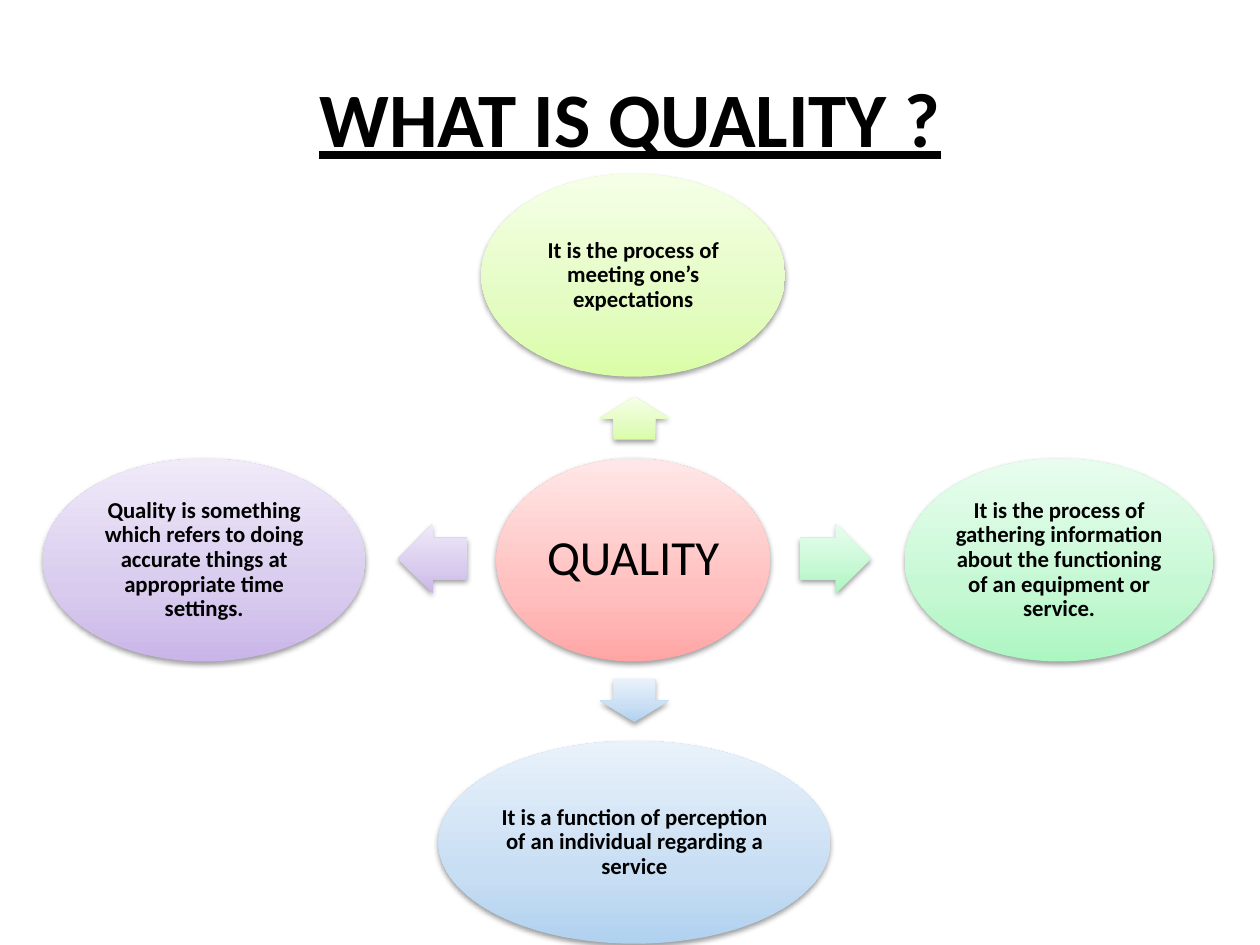
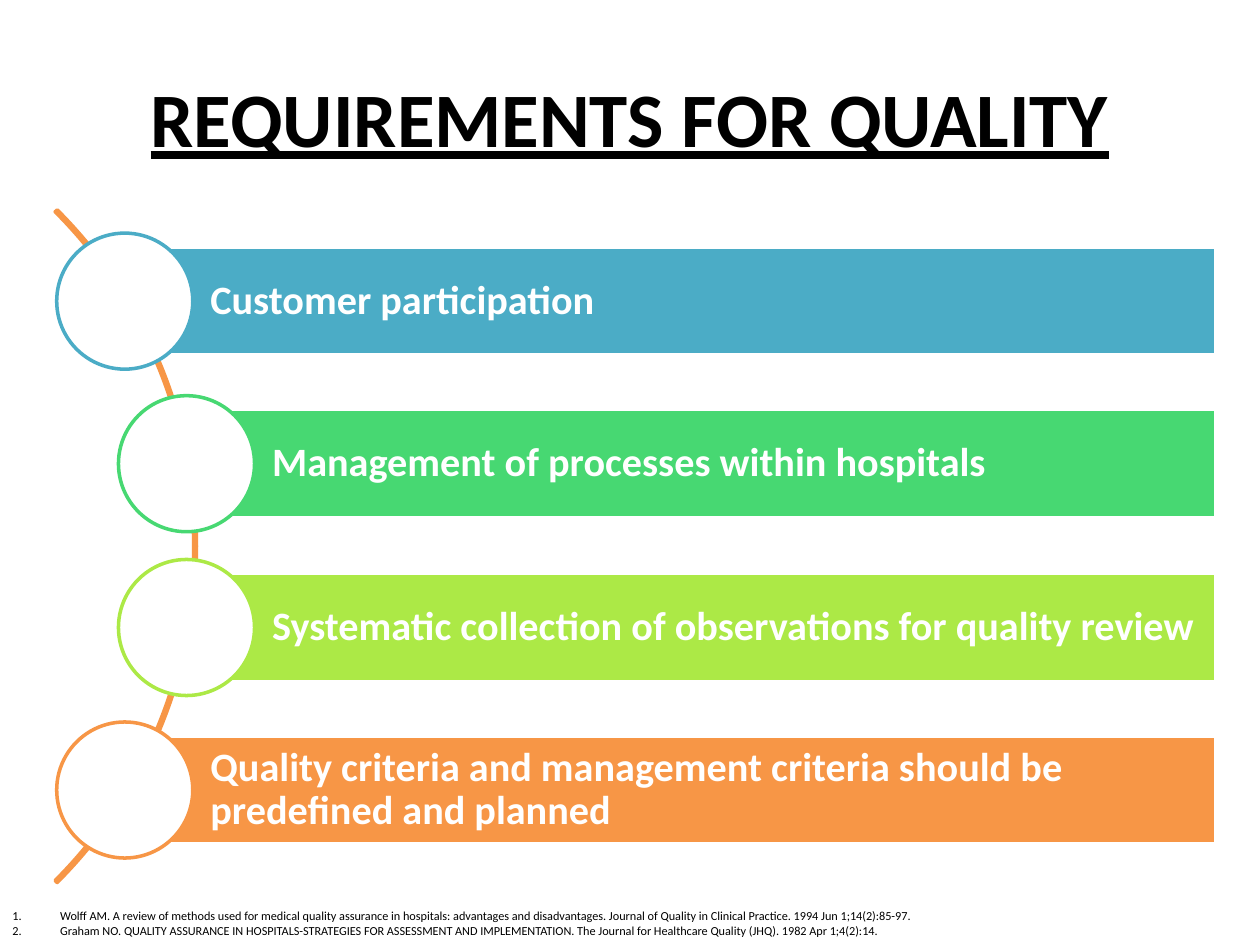
import copy

import pptx
import pptx.util
from lxml import etree
from pptx.dml.color import RGBColor
from pptx.enum.shapes import MSO_SHAPE
from pptx.enum.text import MSO_ANCHOR, PP_ALIGN
from pptx.oxml.ns import qn

EMU_PER_PX = 9144  # 100 px to the inch
FONT = "Calibri"

COLORS = {
    "text": "000000",
    "white": "FFFFFF",
    "teal": "4BACC6",
    "green": "47D872",
    "lime": "ACE946",
    "orange": "F79646",
}
GRADIENTS = {
    "red": ("FFA6A5", "FFC0BF", "FFE7E7"),
    "lime": ("DAFDA7", "E4FCC2", "F5FFE7"),
    "green": ("ACF6C1", "C5F8D3", "E8FDEE"),
    "blue": ("B0D1EF", "C8DEF3", "E9F2FB"),
    "purple": ("C9B5E8", "D8CBEE", "F0EAF9"),
}
GRADIENT_POSITIONS = (0, 0.35, 1)

# Centre of the hub, and what surrounds it
HUB_X, HUB_Y = 503, 444
OVAL_HEIGHT = 161
# text, gradient, oval centre x, y and width, arrow shape, arrow centre x, y and size
MEANINGS = [
    ("It is the process of meeting one’s expectations", "lime",
     (HUB_X, HUB_Y - 225, 241), MSO_SHAPE.UP_ARROW, (HUB_X, 332, 55, 34)),
    ("It is the process of gathering information about the functioning of an "
     "equipment or service.", "green",
     (840, HUB_Y, 245), MSO_SHAPE.RIGHT_ARROW, (663, HUB_Y, 56, 55)),
    ("It is a function of perception of an individual regarding a service", "blue",
     (HUB_X, HUB_Y + 225, 311), MSO_SHAPE.DOWN_ARROW, (HUB_X, 556, 55, 34)),
    ("Quality is something which refers to doing accurate things at appropriate "
     "time settings.", "purple",
     (162, HUB_Y, 256), MSO_SHAPE.LEFT_ARROW, (344, HUB_Y, 55, 55)),
]

# text, colour, centre x of the circle
REQUIREMENTS = [
    ("Customer participation", "teal", 99),
    ("Management of processes within hospitals", "green", 148),
    ("Systematic collection of observations for quality review", "lime", 148),
    ("Quality criteria and management criteria should be predefined and planned",
     "orange", 99),
]
FIRST_ROW_Y, LAST_ROW_Y = 239, 627
BAR_RIGHT, BAR_HEIGHT, CIRCLE_SIZE = 965, 86, 108

REFERENCES = [
    "Wolff AM. A review of methods used for medical quality assurance in hospitals: "
    "advantages and disadvantages. Journal of Quality in Clinical Practice. "
    "1994 Jun 1;14(2):85-97.",
    "Graham NO. QUALITY ASSURANCE IN HOSPITALS-STRATEGIES FOR ASSESSMENT AND "
    "IMPLEMENTATION. The Journal for Healthcare Quality (JHQ). 1982 Apr 1;4(2):14.",
]


def px(length):
    return pptx.util.Emu(round(length) * EMU_PER_PX)


def rgb(name):
    return RGBColor.from_string(COLORS[name])


def write(frame, *texts, size, color="text", bold=False, underline=False,
          align=PP_ALIGN.LEFT, anchor=MSO_ANCHOR.MIDDLE, insets=(10, 5, 10, 5),
          spacing=None, number_indent=None):
    """Fill a text frame with one paragraph per text; insets run left, top, right, bottom."""
    frame.word_wrap = True
    frame.vertical_anchor = anchor
    (frame.margin_left, frame.margin_top,
     frame.margin_right, frame.margin_bottom) = map(px, insets)
    for index, text in enumerate(texts):
        paragraph = frame.add_paragraph() if index else frame.paragraphs[0]
        if number_indent:
            number_paragraph(paragraph, number_indent)
        paragraph.alignment = align
        paragraph.line_spacing = spacing
        run = paragraph.add_run()
        run.text = text
        run.font.name = FONT
        run.font.size = pptx.util.Pt(size)
        run.font.bold = bold
        run.font.underline = underline
        run.font.color.rgb = rgb(color)


def number_paragraph(paragraph, indent):
    properties = paragraph._p.get_or_add_pPr()
    properties.set("marL", str(px(indent)))
    properties.set("indent", str(-px(indent)))
    etree.SubElement(properties, qn("a:buFont"), typeface="+mj-lt")
    etree.SubElement(properties, qn("a:buAutoNum"), type="arabicPeriod")


def add_text(slide, left, top, width, height, *texts, **text_format):
    box = slide.shapes.add_textbox(px(left), px(top), px(width), px(height))
    write(box.text_frame, *texts, **text_format)


def add_title(slide, text):
    add_text(slide, 50, 30, 900, 125, text, size=44, bold=True, underline=True,
             align=PP_ALIGN.CENTER)


def add_outlined(slide, kind, left, top, width, height, fill, line):
    """Add a flat shape with a 2 pt outline; no fill when fill is None."""
    shape = slide.shapes.add_shape(kind, px(left), px(top), px(width), px(height))
    shape.shadow.inherit = False
    if fill:
        shape.fill.solid()
        shape.fill.fore_color.rgb = rgb(fill)
    else:
        shape.fill.background()
    shape.line.color.rgb = rgb(line)
    shape.line.width = pptx.util.Pt(2)
    return shape


def add_glossy(slide, kind, center_x, center_y, width, height, gradient):
    """Add a centred shape with a vertical gradient and a soft shadow below."""
    shape = slide.shapes.add_shape(kind, px(center_x - width / 2), px(center_y - height / 2),
                                   px(width), px(height))
    shape.line.fill.background()
    shape.fill.gradient()
    shape.fill.gradient_angle = 90
    properties = shape._element.spPr
    stop_list = properties.find(".//" + qn("a:gsLst"))
    stop_list.append(copy.deepcopy(stop_list[-1]))
    for stop, position, color in zip(shape.fill.gradient_stops, GRADIENT_POSITIONS,
                                     GRADIENTS[gradient]):
        stop.position = position
        stop.color.rgb = RGBColor.from_string(color)
    shape.shadow.inherit = False
    shadow = etree.SubElement(properties.find(qn("a:effectLst")), qn("a:outerShdw"),
                              blurRad="40000", dist="20000", dir="5400000",
                              rotWithShape="0")
    shadow_color = etree.SubElement(shadow, qn("a:srgbClr"), val="000000")
    etree.SubElement(shadow_color, qn("a:alpha"), val="38000")
    return shape


def add_oval(slide, center_x, center_y, width, gradient, text, size, bold, inset):
    oval = add_glossy(slide, MSO_SHAPE.OVAL, center_x, center_y, width, OVAL_HEIGHT, gradient)
    write(oval.text_frame, text, size=size, bold=bold, align=PP_ALIGN.CENTER,
          insets=(inset,) * 4, spacing=0.9)


def add_requirement(slide, center_x, center_y, text, color):
    bar = add_outlined(slide, MSO_SHAPE.RECTANGLE, center_x, center_y - BAR_HEIGHT / 2,
                       BAR_RIGHT - center_x, BAR_HEIGHT, color, "white")
    write(bar.text_frame, text, size=23, color="white", bold=True,
          insets=(68, 6, 6, 6), spacing=0.9)
    radius = CIRCLE_SIZE / 2
    add_outlined(slide, MSO_SHAPE.OVAL, center_x - radius, center_y - radius,
                 CIRCLE_SIZE, CIRCLE_SIZE, "white", color)


def build_definition(slide):
    add_title(slide, "WHAT IS QUALITY ?")
    add_oval(slide, HUB_X, HUB_Y, 217, "red", "QUALITY", 28, False, 4)
    for text, gradient, oval, arrow_kind, arrow_box in MEANINGS:
        arrow = add_glossy(slide, arrow_kind, *arrow_box, gradient)
        arrow.adjustments[0] = 0.6
        arrow.adjustments[1] = 0.5
        add_oval(slide, *oval, gradient, text, 13, True, 2)


def build_requirements(slide):
    add_title(slide, "REQUIREMENTS FOR QUALITY")
    arc = add_outlined(slide, MSO_SHAPE.BLOCK_ARC, -599, 56, 755, 755, None, "orange")
    for index, adjustment in enumerate((189, 27, 0.003)):
        arc.adjustments[index] = adjustment
    row_step = (LAST_ROW_Y - FIRST_ROW_Y) / (len(REQUIREMENTS) - 1)
    for row, (text, color, center_x) in enumerate(REQUIREMENTS):
        add_requirement(slide, center_x, FIRST_ROW_Y + row * row_step, text, color)
    add_text(slide, 0, 716, 1000, 34, *REFERENCES, size=7, anchor=MSO_ANCHOR.TOP,
             number_indent=38)


def main():
    deck = pptx.Presentation()
    deck.slide_width, deck.slide_height = px(1000), px(750)
    blank = deck.slide_layouts[6]
    for build in (build_definition, build_requirements):
        build(deck.slides.add_slide(blank))
    deck.save("out.pptx")


if __name__ == "__main__":
    main()
